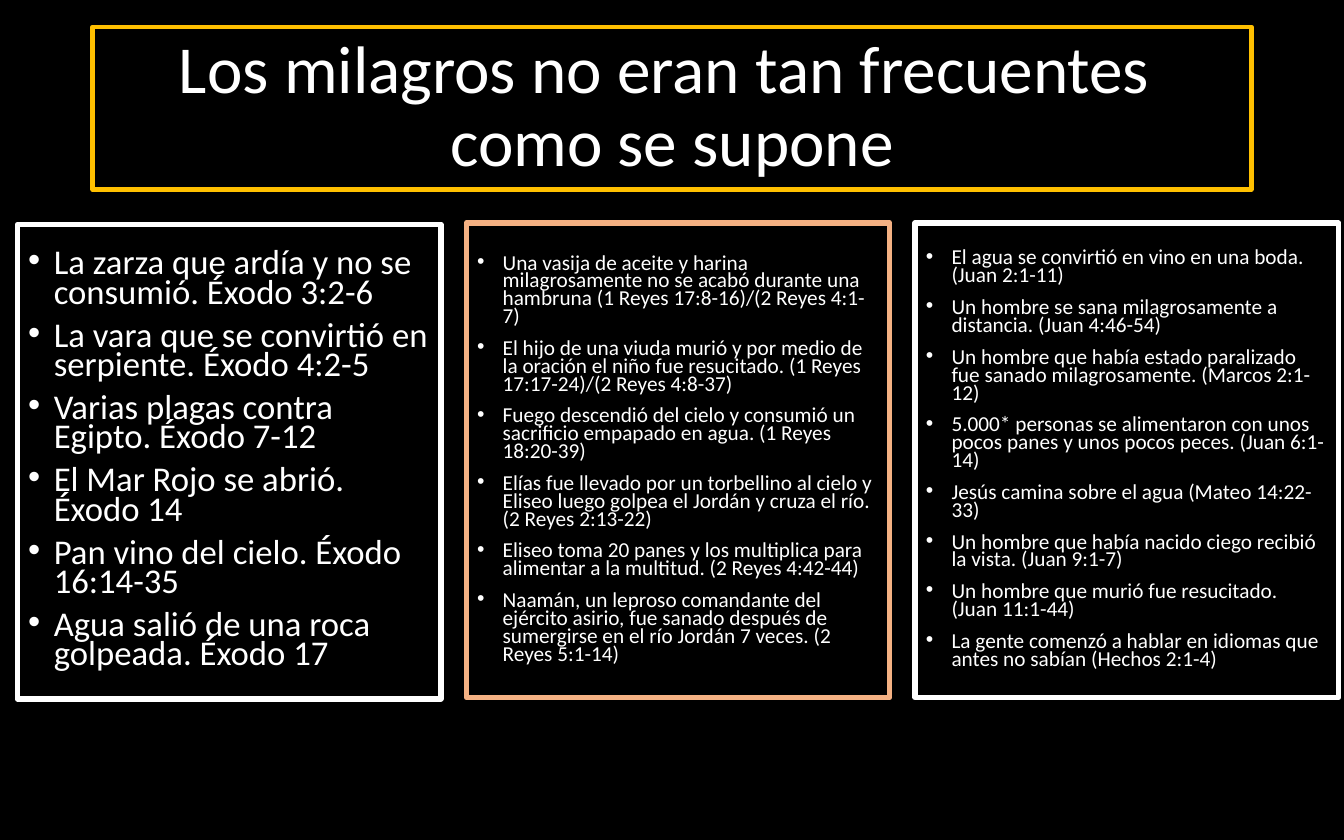
"""Build a slide with a framed title over three framed lists of miracles."""
from lxml import etree
from pptx import Presentation
from pptx import util as u
from pptx.dml.color import RGBColor
from pptx.enum import shapes, text
from pptx.oxml import ns

THEME = {
    "font": "Calibri",
    "background": RGBColor(0x00, 0x00, 0x00),
    "text": RGBColor(0xFF, 0xFF, 0xFF),
    "gold": RGBColor(0xFF, 0xC0, 0x00),
    "peach": RGBColor(0xF4, 0xB1, 0x83),
    "title_size": u.Pt(36),
    "large_size": u.Pt(18.6),
    "small_size": u.Pt(11.4),
}
TITLE = "Los milagros no eran tan frecuentes \vcomo se supone"
EXODUS = [
    "La zarza que ardía y no se consumió. Éxodo 3:2-6",
    "La vara que se convirtió en serpiente. Éxodo 4:2-5",
    "Varias plagas contra Egipto. Éxodo 7-12",
    "El Mar Rojo se abrió. Éxodo 14",
    "Pan vino del cielo. Éxodo 16:14-35",
    "Agua salió de una roca golpeada. Éxodo 17",
]
KINGS = [
    "Una vasija de aceite y harina milagrosamente no se acabó durante una hambruna (1 Reyes 17:8-16)/(2 Reyes 4:1-7)",
    "El hijo de una viuda murió y por medio de la oración el niño fue resucitado. (1 Reyes 17:17-24)/(2 Reyes 4:8-37)",
    "Fuego descendió del cielo y consumió un sacrificio empapado en agua. (1 Reyes 18:20-39)",
    "Elías fue llevado por un torbellino al cielo y Eliseo luego golpea el Jordán y cruza el río. (2 Reyes 2:13-22)",
    "Eliseo toma 20 panes y los multiplica para alimentar a la multitud. (2 Reyes 4:42-44)",
    "Naamán, un leproso comandante del ejército asirio, fue sanado después de sumergirse en el río Jordán 7 veces. (2 Reyes 5:1-14)",
]
GOSPELS = [
    "El agua se convirtió en vino en una boda. (Juan 2:1-11)",
    "Un hombre se sana milagrosamente a distancia. (Juan 4:46-54)",
    "Un hombre que había estado paralizado fue sanado milagrosamente. (Marcos 2:1-12)",
    "5.000* personas se alimentaron con unos pocos panes y unos pocos peces. (Juan 6:1-14)",
    "Jesús camina sobre el agua (Mateo 14:22-33)",
    "Un hombre que había nacido ciego recibió la vista. (Juan 9:1-7)",
    "Un hombre que murió fue resucitado. (Juan 11:1-44)",
    "La gente comenzó a hablar en idiomas que antes no sabían (Hechos 2:1-4)",
]
FRAME_FORMAT = {
    "word_wrap": True,
    "vertical_anchor": text.MSO_ANCHOR.MIDDLE,
    "margin_left": u.Inches(0.08),
    "margin_right": u.Inches(0.08),
    "margin_top": u.Inches(0.04),
    "margin_bottom": u.Inches(0.04),
}
TITLE_FORMAT = {"alignment": text.PP_ALIGN.CENTER, "line_spacing": 0.9}
LIST_FORMAT = {"alignment": text.PP_ALIGN.LEFT, "line_spacing": 0.7}
INDENT = u.Inches(0.19)


def add_frame(page, place, color, weight):
    box = page.shapes.add_shape(
        shapes.MSO_SHAPE.RECTANGLE, *[u.Inches(length) for length in place]
    )
    box.shadow.inherit = False
    box.fill.background()
    box.line.color.rgb = color
    box.line.width = u.Pt(weight)
    for name, value in FRAME_FORMAT.items():
        setattr(box.text_frame, name, value)
    return box.text_frame


def write(para, words, size, layout):
    para.text = words
    for name, value in layout.items():
        setattr(para, name, value)
    for span in para.runs:
        for name, value in {"name": THEME["font"], "size": size}.items():
            setattr(span.font, name, value)
        span.font.color.rgb = THEME["text"]


deck = Presentation()
deck.slide_width, deck.slide_height = u.Inches(10), u.Inches(6.25)
page = deck.slides.add_slide(deck.slide_layouts[6])
page.background.fill.solid()
page.background.fill.fore_color.rgb = THEME["background"]

title = add_frame(page, (0.69, 0.2, 8.62, 1.21), THEME["gold"], 2.5)
write(title.paragraphs[0], TITLE, THEME["title_size"], TITLE_FORMAT)

columns = [
    (EXODUS, 1.67, THEME["text"], THEME["large_size"]),
    (KINGS, 1.66, THEME["peach"], THEME["small_size"]),
    (GOSPELS, 1.66, THEME["text"], THEME["small_size"]),
]
for column, (miracles, top, color, size) in enumerate(columns):
    frame = add_frame(page, (0.13 + 3.34 * column, top, 3.15, 3.53), color, 3)
    for row, miracle in enumerate(miracles):
        para = frame.add_paragraph() if row else frame.paragraphs[0]
        write(para, miracle, size, LIST_FORMAT)
        para.space_before = u.Pt(7.5 if row else 0)
        properties = para._p.get_or_add_pPr()
        properties.set("marL", str(INDENT))
        properties.set("indent", str(-INDENT))
        etree.SubElement(properties, ns.qn("a:buFont"), typeface="Arial")
        etree.SubElement(properties, ns.qn("a:buChar"), char="•")

deck.save("out.pptx")
